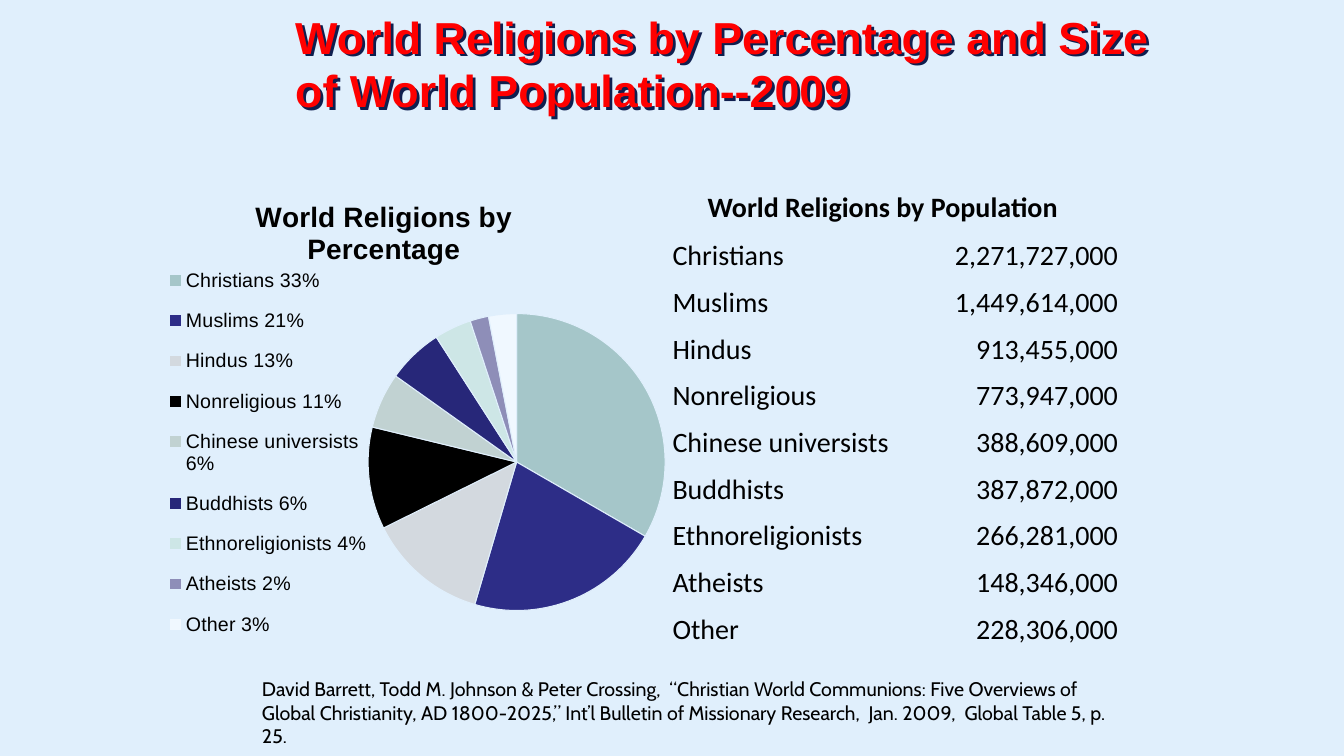
from lxml import etree
from pptx import Presentation
from pptx.chart.data import CategoryChartData
from pptx.dml.color import RGBColor
from pptx.enum.chart import XL_CHART_TYPE, XL_LEGEND_POSITION
from pptx.enum.text import MSO_ANCHOR, PP_ALIGN
from pptx.oxml import parse_xml
from pptx.oxml.ns import nsdecls, qn
from pptx.util import Inches, Pt

PIE = XL_CHART_TYPE.PIE
LEGEND_LEFT = XL_LEGEND_POSITION.LEFT
TOP, MIDDLE, BOTTOM = MSO_ANCHOR.TOP, MSO_ANCHOR.MIDDLE, MSO_ANCHOR.BOTTOM
LEFT, RIGHT = PP_ALIGN.LEFT, PP_ALIGN.RIGHT

SKY = RGBColor(0xE0, 0xEF, 0xFC)
RED = RGBColor(0xFF, 0x00, 0x00)
BLACK = RGBColor(0x00, 0x00, 0x00)
SLICE_COLORS = [RGBColor.from_string(code) for code in (
    "A5C6C9", "2D2D87", "D3D9DF", "000000", "C1D2D2",
    "272779", "CDE6E6", "8E8EB8", "F0F8FF")]
NO_STYLE_NO_GRID = "{2D5ABB26-0587-4C30-8999-92F81FD0307C}"

TITLE = "World Religions by Percentage and Size  of World Population--2009"
CHART_TITLE = "World Religions by Percentage"
TABLE_TITLE = "World Religions by Population"
CITATION = (
    "David Barrett, Todd M. Johnson & Peter Crossing,  “Christian World "
    "Communions: Five Overviews of Global Christianity, AD 1800-2025,” "
    "Int’l Bulletin of Missionary Research,  Jan. 2009,  Global Table 5, p. 25.")
RELIGIONS = [
    ("Christians", 33, 2271727000),
    ("Muslims", 21, 1449614000),
    ("Hindus", 13, 913455000),
    ("Nonreligious", 11, 773947000),
    ("Chinese universists", 6, 388609000),
    ("Buddhists", 6, 387872000),
    ("Ethnoreligionists", 4, 266281000),
    ("Atheists", 2, 148346000),
    ("Other", 3, 228306000),
]


def set_font(font, color=BLACK, **values):
    font.color.rgb = color
    for attribute, value in values.items():
        setattr(font, attribute, value)


def add_text(slide, text, box, anchor=TOP, **font_values):
    text_box = slide.shapes.add_textbox(*(Inches(length) for length in box))
    frame = text_box.text_frame
    frame.word_wrap = True
    frame.vertical_anchor = anchor
    frame.text = text
    set_font(frame.paragraphs[0].font, **font_values)
    return text_box


def add_navy_shadow(text_box):
    """Cast the letters of an unfilled box down and to the right."""
    text_box._element.spPr.append(parse_xml(
        f'<a:effectLst {nsdecls("a")}>'
        '<a:outerShdw dist="36000" dir="2700000" algn="ctr" rotWithShape="0">'
        '<a:srgbClr val="0F1F4F"/></a:outerShdw></a:effectLst>'))


def set_layout(part, position, **layout):
    """Place a chart part by fractions of the chart's size."""
    for old_layout in part.findall(qn("c:layout")):
        part.remove(old_layout)
    element = etree.Element(qn("c:layout"))
    manual = etree.SubElement(element, qn("c:manualLayout"))
    for tag, value in layout.items():
        etree.SubElement(manual, qn(f"c:{tag}"), val=str(value))
    part.insert(position, element)


def add_percentage_pie(slide):
    data = CategoryChartData()
    data.categories = [f"{name} {percent}%" for name, percent, _ in RELIGIONS]
    data.add_series(CHART_TITLE, [percent for _, percent, _ in RELIGIONS])
    chart = slide.shapes.add_chart(
        PIE, Inches(1.67), Inches(1.83), Inches(5.08), Inches(4.75), data).chart
    set_font(chart.font, name="Arial", size=Pt(10))

    chart.has_title = True
    heading = chart.chart_title
    heading.include_in_layout = False
    heading.text_frame.text = CHART_TITLE
    set_font(heading.text_frame.paragraphs[0].font,
             name="Arial", size=Pt(20), bold=True)

    chart.has_legend = True
    legend = chart.legend
    legend.position = LEGEND_LEFT
    legend.include_in_layout = False
    set_font(legend.font, name="Arial", size=Pt(14))

    plot = chart.plots[0]
    plot.vary_by_categories = True
    for index, color in enumerate(SLICE_COLORS):
        slice_format = plot.series[0].points[index].format
        slice_format.fill.solid()
        slice_format.fill.fore_color.rgb = color
        slice_format.line.color.rgb = SKY
        slice_format.line.width = Pt(0.75)

    plot_area = chart._chartSpace.chart.plotArea
    set_layout(heading._element, 1, xMode="edge", yMode="edge", x=0.16, y=0.02)
    set_layout(legend._element, 1, xMode="edge", yMode="edge",
               x=0, y=0.14, w=0.39, h=0.84)
    set_layout(plot_area, 0, layoutTarget="inner", xMode="edge", yMode="edge",
               x=0.39, y=0.21, w=0.58, h=0.74)


def fill_cell(cell, text, alignment):
    cell.fill.background()
    cell.vertical_anchor = BOTTOM
    for side in ("left", "top", "right", "bottom"):
        setattr(cell, f"margin_{side}", 0)
    cell.text = text
    paragraph = cell.text_frame.paragraphs[0]
    paragraph.alignment = alignment
    set_font(paragraph.font, name="Calibri", size=Pt(20))


def add_population_table(slide):
    table = slide.shapes.add_table(
        len(RELIGIONS), 2,
        Inches(6.67), Inches(2.25), Inches(4.42), Inches(4.17)).table
    table.first_row = table.horz_banding = False
    table._tbl.tblPr.find(qn("a:tableStyleId")).text = NO_STYLE_NO_GRID
    for column, width in zip(table.columns, (2.54, 1.88)):
        column.width = Inches(width)
    for row, (name, _, population) in enumerate(RELIGIONS):
        fill_cell(table.cell(row, 0), name, LEFT)
        fill_cell(table.cell(row, 1), f"{population:,}", RIGHT)


def main():
    presentation = Presentation()
    presentation.slide_width = Inches(13.33)
    presentation.slide_height = Inches(7.5)
    slide = presentation.slides.add_slide(presentation.slide_layouts[6])
    slide.background.fill.solid()
    slide.background.fill.fore_color.rgb = SKY

    title = add_text(slide, TITLE, (2.83, 0, 8.83, 1.25), MIDDLE,
                     color=RED, name="Arial", size=Pt(32), bold=True)
    add_navy_shadow(title)
    add_text(slide, CITATION, (2.5, 6.67, 8.75, 0.57),
             name="Cabin", size=Pt(14))
    add_percentage_pie(slide)
    add_population_table(slide)
    add_text(slide, TABLE_TITLE, (6.92, 1.83, 3.83, 0.44),
             name="Calibri", size=Pt(20), bold=True)
    presentation.save("out.pptx")


if __name__ == "__main__":
    main()
